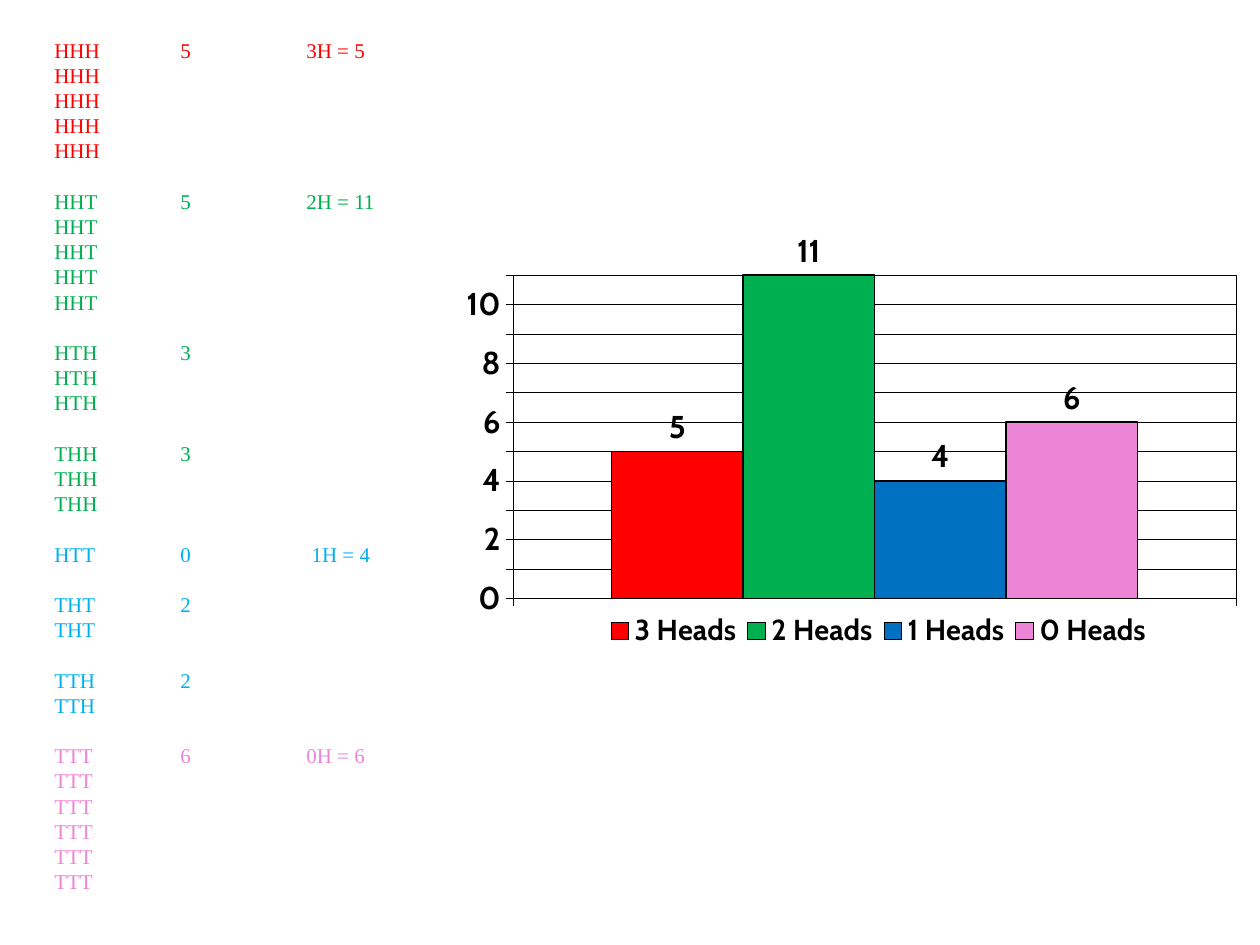
from pptx import Presentation
from pptx import util as u
from pptx.chart.data import CategoryChartData
from pptx.dml.color import RGBColor
from pptx.enum import chart as charts
from pptx.oxml import parse_xml
from pptx.oxml.ns import nsdecls

PX = 914400 // 126
COLOURS = {
    "black": "000000", "red": "FF0000", "green": "00B050",
    "sky": "00B0F0", "blue": "0070C0", "pink": "ED85D7",
}
LINE_HEIGHT = u.Pt(14.4)
TAB_STOPS = (126, 252)

# outcome, frequency, total for that number of heads, colour
TOSSES = [
    ("HHH", 5, "3H = 5", "red"),
    ("HHT", 5, "2H = 11", "green"),
    ("HTH", 3, "", "green"),
    ("THH", 3, "", "green"),
    ("HTT", 0, " 1H = 4", "sky"),
    ("THT", 2, "", "sky"),
    ("TTH", 2, "", "sky"),
    ("TTT", 6, "0H = 6", "pink"),
]
HEADS = [
    ("3 Heads", 5, "red"),
    ("2 Heads", 11, "green"),
    ("1 Heads", 4, "blue"),
    ("0 Heads", 6, "pink"),
]


def px(*lengths):
    return [u.Emu(length * PX) for length in lengths]


def colour(name):
    return RGBColor.from_string(COLOURS[name])


def style_font(font, name, size, colour_name, bold=False):
    font.name, font.size, font.bold = name, u.Pt(size), bold
    font.color.rgb = colour(colour_name)


def style_line(line, width):
    line.color.rgb = colour("black")
    line.width = u.Pt(width)


def set_tab_stops(paragraph):
    """Add the tab stops; the paragraph's font must be set already."""
    stops = "".join(f'<a:tab pos="{stop}" algn="l"/>' for stop in px(*TAB_STOPS))
    tabs = parse_xml(f'<a:tabLst {nsdecls("a")}>{stops}</a:tabLst>')
    paragraph._p.pPr.find("{*}defRPr").addprevious(tabs)


def add_tally(slide):
    """List each outcome as often as it came up, its counts on the first line."""
    frame = slide.shapes.add_textbox(*px(42, 31, 630, 929)).text_frame
    frame.word_wrap = True
    paragraph = frame.paragraphs[0]
    for group, (outcome, count, total, colour_name) in enumerate(TOSSES):
        for row in range(max(count, 1)):
            if group or row:
                paragraph = frame.add_paragraph()
            first = row == 0
            paragraph.text = f"{outcome}\t{count}\t{total}".rstrip() if first else outcome
            paragraph.line_spacing = LINE_HEIGHT
            paragraph.space_before = LINE_HEIGHT if first and group else u.Pt(0)
            style_font(paragraph.font, "Times New Roman", 12, colour_name)
            if first:
                set_tab_stops(paragraph)


def set_layout(element, x, y, width, height, inner=False):
    """Place a plot area or legend by fractions of the chart's size."""
    for old in element.findall("{*}layout"):
        element.remove(old)
    target = '<c:layoutTarget val="inner"/>' if inner else ""
    layout = parse_xml(
        f'<c:layout {nsdecls("c")}><c:manualLayout>{target}'
        '<c:xMode val="edge"/><c:yMode val="edge"/>'
        f'<c:x val="{x}"/><c:y val="{y}"/><c:w val="{width}"/><c:h val="{height}"/>'
        "</c:manualLayout></c:layout>"
    )
    element.insert(0 if inner else 1, layout)


def style_axis(axis):
    axis.has_major_gridlines = True
    style_line(axis.major_gridlines.format.line, 0.25)
    style_line(axis.format.line, 0.25)
    axis.major_tick_mark = charts.XL_TICK_MARK.CROSS
    style_font(axis.tick_labels.font, "Cabin", 18, "black", True)


def style_series(series, colour_name):
    series.format.fill.solid()
    series.format.fill.fore_color.rgb = colour(colour_name)
    style_line(series.format.line, 1)
    labels = series.data_labels
    labels.show_value = True
    labels.position = charts.XL_LABEL_POSITION.OUTSIDE_END
    style_font(labels.font, "Cabin", 18, "black", True)


def add_heads_chart(slide):
    data = CategoryChartData()
    data.categories = [""]
    for name, count, _ in HEADS:
        data.add_series(name, [count])
    chart = slide.shapes.add_chart(
        charts.XL_CHART_TYPE.COLUMN_CLUSTERED, *px(458, 229, 786, 462), data).chart
    chart.has_title = False
    style_font(chart.font, "Cabin", 18, "black", True)

    plot = chart.plots[0]
    plot.vary_by_categories = False
    plot.gap_width, plot.overlap = 150, 0
    for series, (_, _, colour_name) in zip(plot.series, HEADS):
        style_series(series, colour_name)

    for axis in (chart.category_axis, chart.value_axis):
        style_axis(axis)
    chart.category_axis.tick_label_position = charts.XL_TICK_LABEL_POSITION.NONE
    chart.value_axis.minimum_scale = 0
    chart.value_axis.maximum_scale = 11
    chart.value_axis.major_unit = 1

    chart.has_legend = True
    legend = chart.legend
    legend.position = charts.XL_LEGEND_POSITION.BOTTOM
    legend.include_in_layout = False
    style_font(legend.font, "Cabin", 16.5, "black", True)
    set_layout(chart._chartSpace.chart.plotArea, 0.07, 0.1, 0.92, 0.7, inner=True)
    set_layout(legend._element, 0.18, 0.83, 0.71, 0.08)


def main():
    presentation = Presentation()
    presentation.slide_width, presentation.slide_height = px(1260, 945)
    slide = presentation.slides.add_slide(presentation.slide_layouts[6])
    add_tally(slide)
    add_heads_chart(slide)
    presentation.save("out.pptx")


if __name__ == "__main__":
    main()
